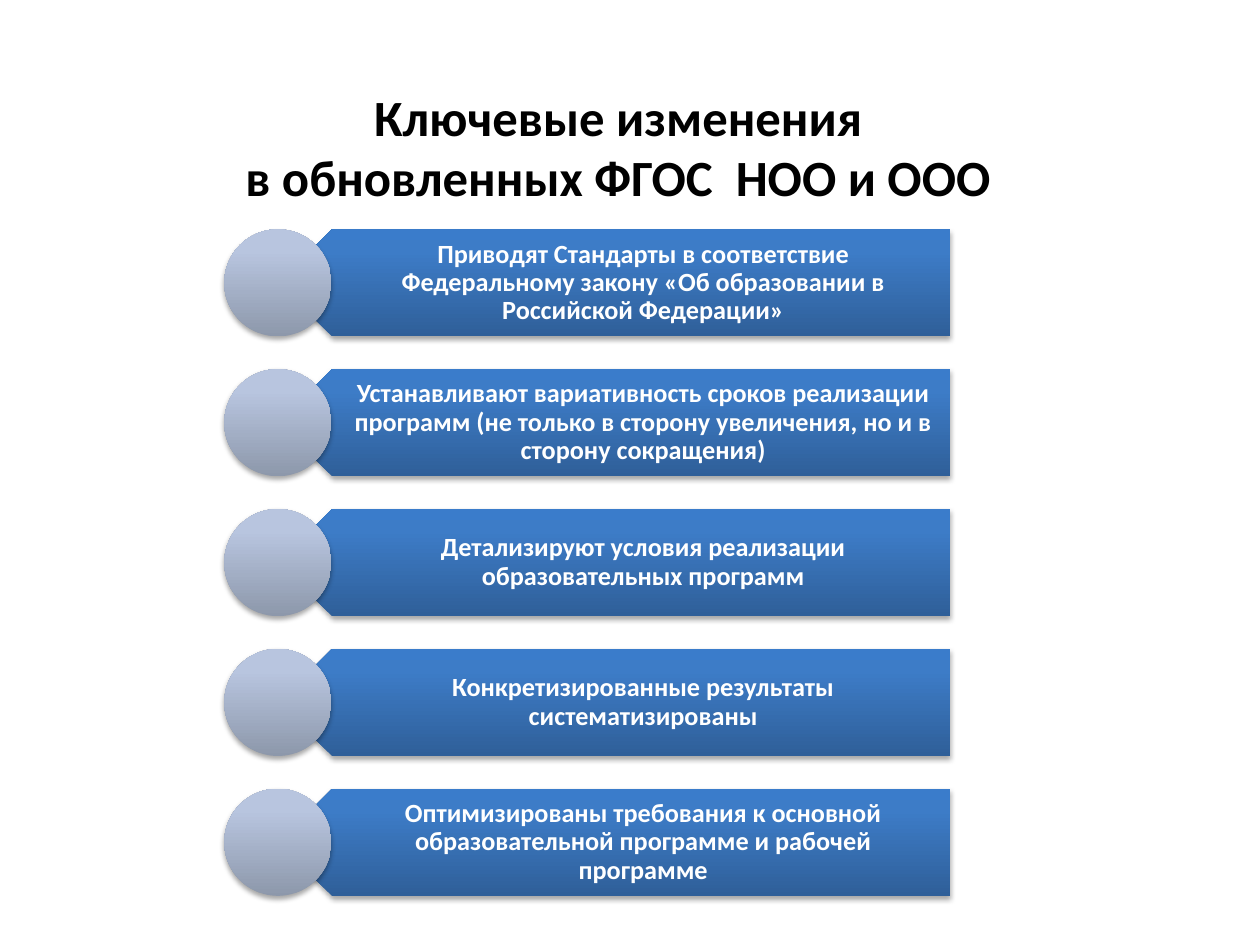
from lxml import etree
from pptx import Presentation
from pptx.dml.color import RGBColor
from pptx.enum import shapes, text
from pptx.oxml import ns, parse_xml
from pptx.util import Inches, Pt

COLORS = {
    "title": "000000",
    "label": "FFFFFF",
    "shadow": "000000",
    "bar": ["2F5F99", "3D7CC7", "3A7CCB"],
    "dot": ["8D98AB", "B8C5DF", "B8C6E0"],
}
CHANGES = [
    "Приводят Стандарты в соответствие Федеральному закону «Об образовании в Российской Федерации»",
    "Устанавливают вариативность сроков реализации программ "
    "(не только в сторону увеличения, но и в сторону сокращения)",
    "Детализируют условия реализации образовательных программ",
    "Конкретизированные результаты систематизированы",
    "Оптимизированы требования к основной образовательной программе и рабочей программе",
]
LABEL_INSETS = {
    "margin_left": Inches(0.38),
    "margin_right": Inches(0.12),
    "margin_top": Inches(0.06),
    "margin_bottom": Inches(0.06),
}


class SlidePainter:
    """Draws styled elements on the current slide."""

    font_name = "Calibri"
    stops = (0, 80, 100)

    def __init__(self, slide):
        self.slide = slide
        self.group = slide.shapes.add_group_shape()

    def gradient(self, shape, colors):
        stops = "".join(
            f'<a:gs pos="{pos * 1000}"><a:srgbClr val="{color}"/></a:gs>'
            for pos, color in zip(self.stops, colors)
        )
        shape.fill.background()
        properties = shape.fill._xPr
        properties.replace(
            properties.find(ns.qn("a:noFill")),
            parse_xml(
                f'<a:gradFill {ns.nsdecls("a")} rotWithShape="0"><a:gsLst>{stops}</a:gsLst>'
                '<a:lin ang="16200000" scaled="0"/></a:gradFill>'
            ),
        )

    def shadow(self, shape):
        shape.shadow.inherit = False
        effects = shape.element.spPr.find(ns.qn("a:effectLst"))
        outer = etree.SubElement(
            effects, ns.qn("a:outerShdw"), blurRad=str(Pt(3.1)), dist=str(Pt(1.8)),
            dir="5400000", rotWithShape="0",
        )
        color = etree.SubElement(outer, ns.qn("a:srgbClr"), val=COLORS["shadow"])
        etree.SubElement(color, ns.qn("a:alpha"), val="35000")

    def figure(self, kind, box, colors, rotation=0):
        shape = self.group.shapes.add_shape(kind, *map(Inches, box))
        shape.rotation = rotation
        self.gradient(shape, colors)
        shape.line.fill.background()
        self.shadow(shape)

    def words(self, parent, box, content, size, color, spacing=1.0, insets=None):
        frame = parent.add_textbox(*map(Inches, box)).text_frame
        layout = {"word_wrap": True, "vertical_anchor": text.MSO_ANCHOR.MIDDLE}
        for name, value in (layout | (insets or {})).items():
            setattr(frame, name, value)
        paragraph = frame.paragraphs[0]
        paragraph.text = content
        paragraph.alignment = text.PP_ALIGN.CENTER
        paragraph.line_spacing = spacing
        for run in paragraph.runs:
            for name, value in {"name": self.font_name, "size": Pt(size), "bold": True}.items():
                setattr(run.font, name, value)
            run.font.color.rgb = RGBColor.from_string(color)

    def title(self, content):
        self.words(self.slide.shapes, (0.41, 0.75, 9, 0.82), content, 29, COLORS["title"])

    def change(self, top, content):
        height = 0.85
        self.figure(shapes.MSO_SHAPE.PENTAGON, (2.21, top, 5.33, height), COLORS["bar"], 180)
        self.words(self.group.shapes, (2.42, top, 5.11, height), content, 15,
                   COLORS["label"], 0.9, LABEL_INSETS)
        self.figure(shapes.MSO_SHAPE.OVAL, (1.78, top, height, height), COLORS["dot"])


def main():
    deck = Presentation()
    deck.slide_width, deck.slide_height = Inches(10), Inches(7.5)
    painter = SlidePainter(deck.slides.add_slide(deck.slide_layouts[6]))
    painter.title("Ключевые изменения\vв обновленных ФГОС  НОО и ООО")
    for row, content in enumerate(CHANGES):
        painter.change(1.82 + 1.11 * row, content)
    deck.save("out.pptx")


if __name__ == "__main__":
    main()
